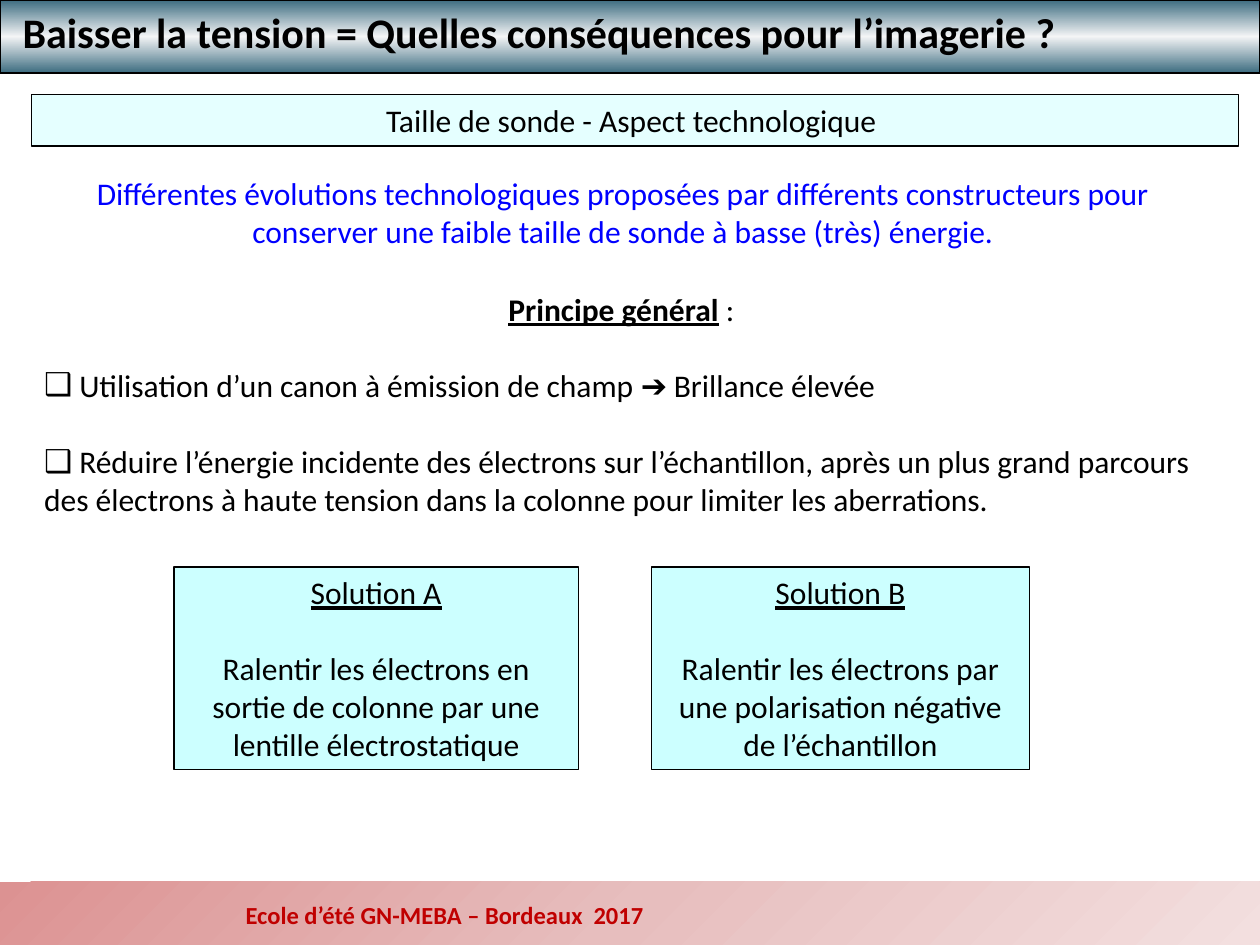
from copy import deepcopy
from dataclasses import dataclass

import pptx
import pptx.dml.color
import pptx.enum.shapes
import pptx.enum.text
import pptx.oxml
import pptx.oxml.ns
import pptx.util
from lxml import etree

Inches = pptx.util.Inches
Pt = pptx.util.Pt
qn = pptx.oxml.ns.qn
ALIGN = pptx.enum.text.PP_ALIGN


@dataclass(frozen=True)
class Theme:
    font: str = "Calibri"
    title_size: float = 24
    text_size: float = 18
    footer_size: float = 14
    line_height: float = 22
    line_width: float = 0.75
    ink: str = "000000"
    accent: str = "0000FF"
    footer_ink: str = "C00000"
    panel: str = "CCFFFF"
    banner: tuple = ("3D6C80", "F4F5F6", "3D6C80")
    footer: tuple = ("DC9292", "E7BEBE", "F3DFDF")


@dataclass(frozen=True)
class Area:
    left: float
    top: float
    width: float
    height: float

    def lengths(self) -> tuple:
        return tuple(map(Inches, (self.left, self.top, self.width, self.height)))


@dataclass(frozen=True)
class Solution:
    heading: str
    method: str
    area: Area


THEME = Theme()

SOLUTIONS = (
    Solution(
        "Solution A",
        "Ralentir les électrons en sortie de colonne par une lentille électrostatique",
        Area(1.38, 4.5, 3.21, 1.61),
    ),
    Solution(
        "Solution B",
        "Ralentir les électrons par une polarisation négative\vde l’échantillon",
        Area(5.17, 4.5, 3, 1.61),
    ),
)


def rgb(code: str):
    return pptx.dml.color.RGBColor.from_string(code)


def write(paragraph, text: str, *, size=THEME.text_size, color=THEME.ink, bold=False,
          underline=False, align=ALIGN.LEFT, before=0, bullet=None) -> None:
    if not paragraph.runs:
        properties = paragraph._p.get_or_add_pPr()
        properties.set("marL", "0")
        properties.set("indent", "0")
        if bullet:
            etree.SubElement(properties, qn("a:buChar")).set("char", bullet)
        else:
            etree.SubElement(properties, qn("a:buNone"))
        paragraph.alignment = align
        paragraph.space_before = Pt(before)
    for index, line in enumerate(text.split("\v")):
        if index:
            paragraph.add_line_break()
        run = paragraph.add_run()
        run.text = line
        run.font.name = THEME.font
        run.font.size = Pt(size)
        run.font.bold = bold
        run.font.underline = underline
        run.font.color.rgb = rgb(color)


def prepare(frame, wrap: bool = True):
    frame.word_wrap = wrap
    frame.auto_size = pptx.enum.text.MSO_AUTO_SIZE.SHAPE_TO_FIT_TEXT
    frame.vertical_anchor = pptx.enum.text.MSO_ANCHOR.TOP
    return frame


def place(holder, area: Area):
    holder.left, holder.top, holder.width, holder.height = area.lengths()
    return prepare(holder.text_frame)


def add_caption(slide, area: Area, wrap: bool = True):
    return prepare(slide.shapes.add_textbox(*area.lengths()).text_frame, wrap)


def add_rectangle(slide, area: Area, outlined: bool = True):
    rectangle = slide.shapes.add_shape(
        pptx.enum.shapes.MSO_SHAPE.RECTANGLE, *area.lengths())
    rectangle.shadow.inherit = False
    if outlined:
        rectangle.line.color.rgb = rgb(THEME.ink)
        rectangle.line.width = Pt(THEME.line_width)
    else:
        rectangle.line.fill.background()
    return rectangle


def add_band(slide, area: Area, colors: tuple, angle: float, outlined: bool) -> None:
    band = add_rectangle(slide, area, outlined)
    band.fill.gradient()
    band.fill.gradient_angle = angle
    stop_list = band.element.spPr.find(qn("a:gradFill")).find(qn("a:gsLst"))
    stop_list.insert(1, deepcopy(stop_list[0]))
    for index, (stop, color) in enumerate(zip(band.fill.gradient_stops, colors)):
        stop.position = index / (len(colors) - 1)
        stop.color.rgb = rgb(color)


def add_panel(slide, area: Area, opacity: int = 100):
    panel = add_rectangle(slide, area)
    panel.fill.solid()
    panel.fill.fore_color.rgb = rgb(THEME.panel)
    if opacity < 100:
        color = panel.element.spPr.find(qn("a:solidFill")).find(qn("a:srgbClr"))
        etree.SubElement(color, qn("a:alpha")).set("val", str(opacity * 1000))
    return prepare(panel.text_frame)


def add_solution(slide, solution: Solution) -> None:
    frame = add_panel(slide, solution.area)
    write(frame.paragraphs[0], solution.heading, underline=True, align=ALIGN.CENTER)
    write(frame.add_paragraph(), solution.method, align=ALIGN.CENTER,
          before=THEME.line_height)


def main() -> None:
    deck = pptx.Presentation()
    deck.slide_width, deck.slide_height = Inches(10), Inches(7.5)
    slide = deck.slides.add_slide(deck.slide_layouts[1])
    title, principles = slide.placeholders

    add_band(slide, Area(0, 7, 10, 0.5), THEME.footer, 315, outlined=False)
    event = add_caption(slide, Area(1.85, 7.09, 3.38, 0.34), wrap=False)
    write(event.paragraphs[0], "Ecole d’été GN-MEBA – Bordeaux  2017",
          size=THEME.footer_size, color=THEME.footer_ink, bold=True)

    add_band(slide, Area(0, 0, 10, 0.58), THEME.banner, 270, outlined=True)
    heading = place(title, Area(0.08, 0, 9.82, 0.5))
    write(heading.paragraphs[0],
          "Baisser la tension = Quelles conséquences pour l’imagerie ?",
          size=THEME.title_size, bold=True)

    topic = add_panel(slide, Area(0.25, 0.75, 9.58, 0.41), opacity=50)
    write(topic.paragraphs[0], "Taille de sonde - Aspect technologique ",
          align=ALIGN.CENTER)

    summary = add_caption(slide, Area(0.42, 1.33, 9.05, 0.7))
    write(summary.paragraphs[0],
          "Différentes évolutions technologiques proposées par différents constructeurs "
          "pour conserver une faible taille de sonde à basse (très) énergie.",
          color=THEME.accent, align=ALIGN.CENTER)

    body = place(principles, Area(0.25, 2.25, 9.42, 1.9))
    write(body.paragraphs[0], "Principe général", bold=True, underline=True,
          align=ALIGN.CENTER)
    write(body.paragraphs[0], " : ")
    for principle in (
        " Utilisation d’un canon à émission de champ ➔ Brillance élevée",
        " Réduire l’énergie incidente des électrons sur l’échantillon, après un plus "
        "grand parcours des électrons à haute tension dans la colonne pour limiter "
        "les aberrations.",
    ):
        write(body.add_paragraph(), principle, before=THEME.line_height, bullet="❑")

    for solution in SOLUTIONS:
        add_solution(slide, solution)

    slide.shapes.element.append(title.element)
    deck.save("out.pptx")


if __name__ == "__main__":
    main()
